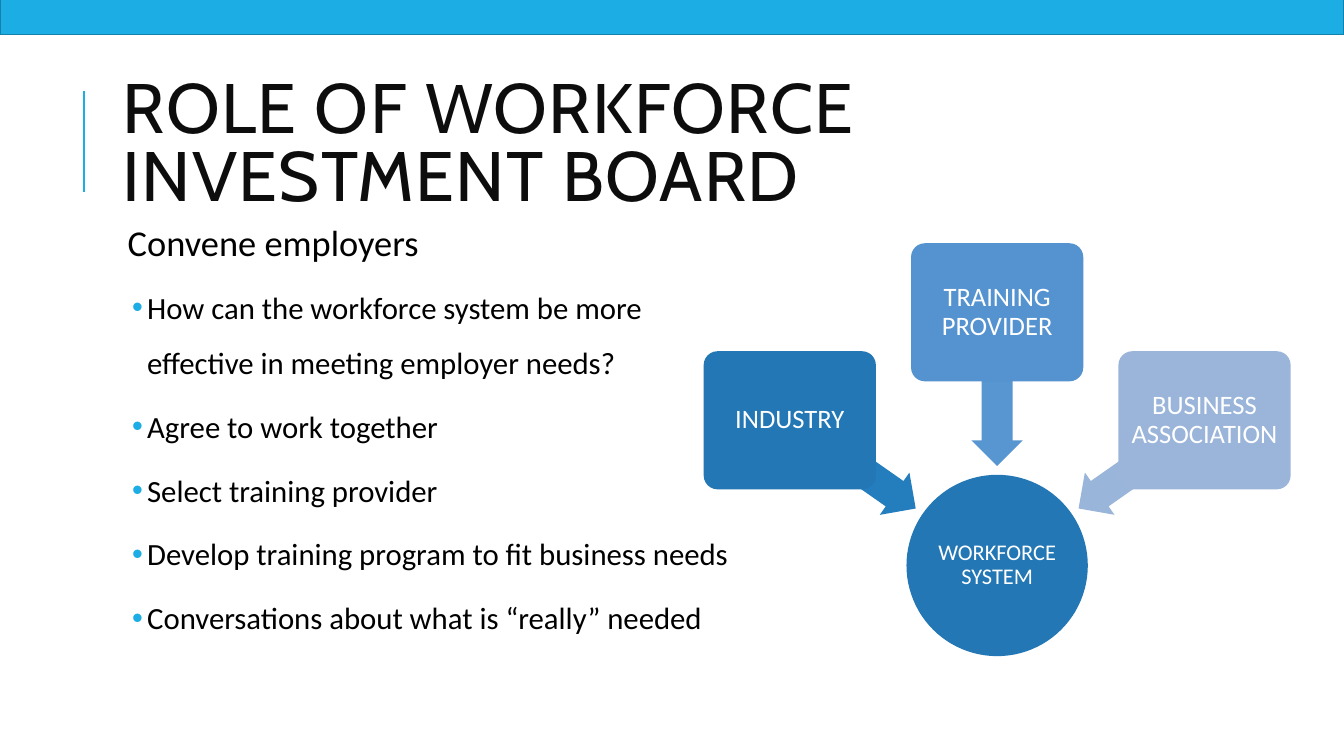
import math

import lxml.etree
import pptx
import pptx.dml.color
import pptx.enum.shapes
import pptx.enum.text
import pptx.oxml.ns
import pptx.util

Cm = pptx.util.Cm
Pt = pptx.util.Pt
SHAPE = pptx.enum.shapes.MSO_SHAPE
ANCHOR = pptx.enum.text.MSO_ANCHOR
ALIGN = pptx.enum.text.PP_ALIGN

# Content
TITLE = "ROLE OF WORKFORCE INVESTMENT BOARD"
LEAD = "Convene employers"
POINTS = [
    "How can the workforce system be more effective in meeting employer needs?",
    "Agree to work together",
    "Select training provider",
    "Develop training program to fit business needs",
    "Conversations about what is “really” needed",
]
HUB = "WORKFORCE SYSTEM"
# label, direction from the hub in degrees, box colour, arrow colour
PARTNERS = [
    ("INDUSTRY", 215, "2277B4", "247DBD"),
    ("TRAINING PROVIDER", 270, "5593D0", "5896D1"),
    ("BUSINESS ASSOCIATION", 325, "9AB5D9", "99B5D9"),
]

THEME = {
    "accent": "1CADE4", "band_line": "1580A9", "hub": "2277B4",
    "title": "0D0D0D", "text": "000000", "light": "FFFFFF",
    "title_font": "Cabin", "body_font": "Calibri",
    "title_size": 50, "lead_size": 26, "point_size": 22,
    "partner_size": 19, "hub_size": 16,
}

# Layout in centimetres
SLIDE_WIDTH, SLIDE_HEIGHT = 33.87, 19.05
TEXT_LEFT = 2.84
HUB_X, HUB_Y, HUB_SIZE = 25.13, 14.25, 4.57
ARROW_RADIUS, ARROW_SIZE = 4.45, (3.89, 1.3)
BOX_RADIUS, BOX_SIZE = 6.38, (4.34, 3.48)


def color(name):
    return pptx.dml.color.RGBColor.from_string(THEME.get(name, name))


def set_frame(frame, anchor, inset_x, inset_y):
    frame.word_wrap = True
    frame.vertical_anchor = anchor
    frame.margin_left = frame.margin_right = Cm(inset_x)
    frame.margin_top = frame.margin_bottom = Cm(inset_y)


def add_text(frame, text, *, size, ink, font="body_font", align=ALIGN.LEFT,
             line=0.9, before=0, after=0, left=0, indent=0, bullet=None,
             tracking=None):
    paragraph = frame.paragraphs[0]
    if paragraph.runs:
        paragraph = frame.add_paragraph()
    properties = paragraph._p.get_or_add_pPr()
    properties.set("marL", str(Cm(left)))
    properties.set("indent", str(Cm(indent)))
    paragraph.alignment = align
    paragraph.line_spacing = line
    paragraph.space_before, paragraph.space_after = Pt(before), Pt(after)
    if bullet:
        qn = pptx.oxml.ns.qn
        tint = lxml.etree.SubElement(properties, qn("a:buClr"))
        lxml.etree.SubElement(tint, qn("a:srgbClr"), val=THEME["accent"])
        lxml.etree.SubElement(properties, qn("a:buFont"), typeface="Arial")
        lxml.etree.SubElement(properties, qn("a:buChar"), char=bullet)
    run = paragraph.add_run()
    run.text = text
    run.font.name = THEME[font]
    run.font.size = Pt(THEME[size])
    run.font.color.rgb = color(ink)
    if tracking:
        run._r.get_or_add_rPr().set("spc", str(tracking * 100))


def add_text_box(slide, left, top, width, height, anchor, inset_x, inset_y):
    box = slide.shapes.add_textbox(Cm(left), Cm(top), Cm(width), Cm(height))
    set_frame(box.text_frame, anchor, inset_x, inset_y)
    return box.text_frame


def add_centred_shape(slide, kind, x, y, size, fill):
    width, height = size
    shape = slide.shapes.add_shape(kind, Cm(x - width / 2), Cm(y - height / 2),
                                   Cm(width), Cm(height))
    shape.shadow.inherit = False
    shape.fill.solid()
    shape.fill.fore_color.rgb = color(fill)
    shape.line.fill.background()
    return shape


def from_hub(radius, angle):
    turn = math.radians(angle)
    return HUB_X + radius * math.cos(turn), HUB_Y + radius * math.sin(turn)


def add_label(shape, text, size, inset):
    set_frame(shape.text_frame, ANCHOR.MIDDLE, inset, inset)
    add_text(shape.text_frame, text, size=size, ink="light", align=ALIGN.CENTER)


def add_decoration(slide):
    rule = slide.shapes.add_connector(
        pptx.enum.shapes.MSO_CONNECTOR.STRAIGHT,
        Cm(2.12), Cm(4.83), Cm(2.12), Cm(2.29))
    rule.line.color.rgb = color("accent")
    rule.line.width = Pt(1.5)
    lxml.etree.SubElement(rule._element.spPr, pptx.oxml.ns.qn("a:effectLst"))

    band = add_centred_shape(slide, SHAPE.RECTANGLE, SLIDE_WIDTH / 2, 0.17,
                             (SLIDE_WIDTH, 1.4), "accent")
    band.line.color.rgb = color("band_line")
    band.line.width = Pt(1.25)


def add_words(slide):
    title = add_text_box(slide, TEXT_LEFT, 1.63, 27, 4.17, ANCHOR.MIDDLE, 0.25, 0.13)
    add_text(title, TITLE, size="title_size", ink="title", font="title_font",
             line=0.8, tracking=1)

    body = add_text_box(slide, TEXT_LEFT, 5.54, 15.88, 11.18, ANCHOR.TOP, 0.13, 0.13)
    add_text(body, LEAD, size="lead_size", ink="text", after=2, left=0.25)
    for point in POINTS:
        add_text(body, point, size="point_size", ink="text", line=1.5,
                 before=2, after=4, left=0.74, indent=-0.38, bullet="•")


def add_diagram(slide):
    hub = add_centred_shape(slide, SHAPE.OVAL, HUB_X, HUB_Y,
                            (HUB_SIZE, HUB_SIZE), "hub")
    add_label(hub, HUB, "hub_size", 0.03)
    for label, angle, box_fill, arrow_fill in PARTNERS:
        arrow = add_centred_shape(slide, SHAPE.LEFT_ARROW,
                                  *from_hub(ARROW_RADIUS, angle),
                                  ARROW_SIZE, arrow_fill)
        arrow.adjustments[0], arrow.adjustments[1] = 0.6, 0.5
        arrow.rotation = angle
        box = add_centred_shape(slide, SHAPE.ROUNDED_RECTANGLE,
                                *from_hub(BOX_RADIUS, angle), BOX_SIZE, box_fill)
        box.adjustments[0] = 0.1
        add_label(box, label, "partner_size", 0.1)


def main():
    presentation = pptx.Presentation()
    presentation.slide_width = Cm(SLIDE_WIDTH)
    presentation.slide_height = Cm(SLIDE_HEIGHT)
    slide = presentation.slides.add_slide(presentation.slide_layouts[6])
    add_decoration(slide)
    add_words(slide)
    add_diagram(slide)
    presentation.save("out.pptx")


if __name__ == "__main__":
    main()
